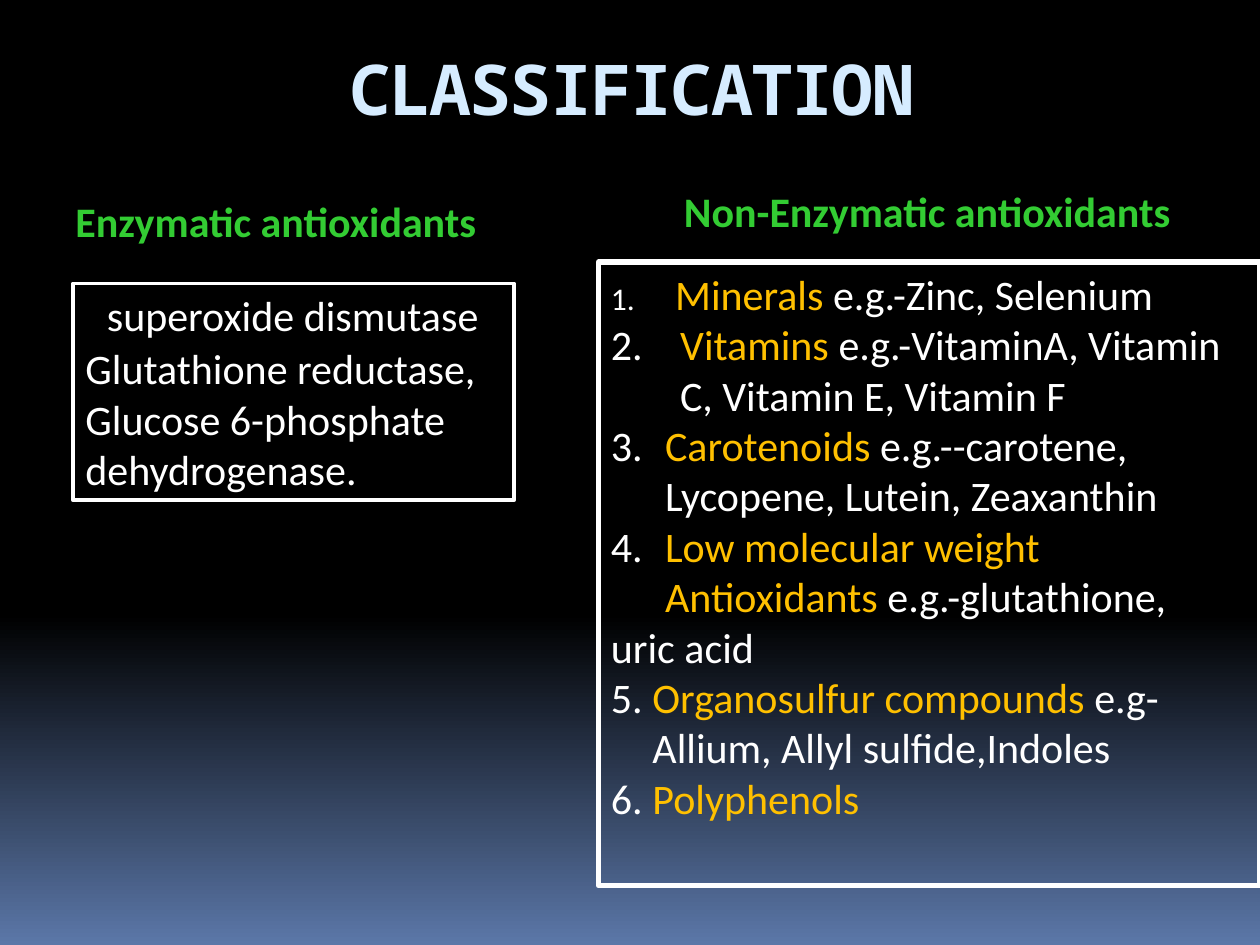
from lxml import etree
from pptx import Presentation
from pptx import util as u
from pptx.dml.color import RGBColor
from pptx.enum import shapes, text
from pptx.oxml.ns import qn

PX = u.Inches(1) // 100
COLORS = {
    "black": "000000", "blue": "5B77A8", "ice": "D6ECFF",
    "green": "33CC33", "white": "FFFFFF", "amber": "FFC000",
}
BODY = {"name": "Calibri", "size": u.Pt(24), "bold": False}
HEADING = {**BODY, "bold": True}
TITLE = {"name": "Noto Sans Mono", "size": u.Pt(40), "bold": True}
FRAME = {"word_wrap": True, "auto_size": text.MSO_AUTO_SIZE.NONE,
         "vertical_anchor": text.MSO_ANCHOR.TOP}

# number, indent, number size in %, highlighted words, plain words
ANTIOXIDANTS = [
    (1, 51, 75, "Minerals", " e.g.-Zinc, Selenium"),
    (2, 55, 100, "Vitamins",
     " e.g.-VitaminA, Vitamin C, Vitamin E, Vitamin F"),
    (3, 43, 100, "Carotenoids", " e.g.--carotene, Lycopene, Lutein, Zeaxanthin"),
    (4, 43, 100, "Low molecular weight Antioxidants", " e.g.-glutathione,"),
    (None, 0, 100, "", "uric acid"),
    (5, 33, 100, "Organosulfur compounds",
     " e.g-Allium, Allyl sulfide,Indoles"),
    (6, 33, 100, "Polyphenols", ""),
]


def rgb(name):
    """Return the named colour."""
    return RGBColor.from_string(COLORS[name])


def apply(target, values):
    """Set attributes of an object from a dict."""
    for name, value in values.items():
        setattr(target, name, value)


def place(shape, box):
    """Put a shape at a box given in px."""
    names = ("left", "top", "width", "height")
    apply(shape, {name: value * PX for name, value in zip(names, box)})


def add_run(paragraph, words, color, font):
    """Add formatted words to a paragraph."""
    run = paragraph.add_run()
    run.text = words
    apply(run.font, font)
    run.font.color.rgb = rgb(color)
    return run


def fill_lines(frame, lines, color, font):
    """Write one left-aligned paragraph per line."""
    for index, line in enumerate(lines):
        paragraph = frame.add_paragraph() if index else frame.paragraphs[0]
        paragraph.alignment = text.PP_ALIGN.LEFT
        add_run(paragraph, line, color, font)


def set_background(slide):
    """Fade the slide from black to blue at the bottom."""
    fill = slide.background.fill
    fill.gradient()
    fill.gradient_angle = 270
    for stop, position, color in zip(fill.gradient_stops, (0.65, 1), ("black", "blue")):
        stop.position = position
        stop.color.rgb = rgb(color)


def set_title(slide, words, box):
    """Move and format the title placeholder."""
    title = slide.shapes.title
    place(title, box)
    apply(title.text_frame, {**FRAME, "margin_top": 3 * PX, "margin_bottom": 0})
    fill_lines(title.text_frame, [words], "ice", TITLE)
    run = title.text_frame.paragraphs[0].runs[0]
    run.font._element.set("spc", "-100")


def add_label(slide, words, box, color, font):
    """Add a single-line text box."""
    label = slide.shapes.add_textbox(*(value * PX for value in box))
    apply(label.text_frame, {**FRAME, "word_wrap": False})
    fill_lines(label.text_frame, [words], color, font)


def add_panel(slide, box, line_width, anchor):
    """Add an outlined rectangle and return its text frame."""
    panel = slide.shapes.add_shape(
        shapes.MSO_SHAPE.RECTANGLE, *(value * PX for value in box))
    panel.shadow.inherit = False
    panel.fill.background()
    panel.line.color.rgb = rgb("white")
    panel.line.width = u.Pt(line_width)
    apply(panel.text_frame, {**FRAME, "vertical_anchor": anchor})
    return panel.text_frame


def number_paragraph(paragraph, number, indent, size):
    """Give a paragraph a hanging automatic number."""
    properties = paragraph._p.get_or_add_pPr()
    properties.set("marL", str(indent * PX))
    properties.set("indent", str(-indent * PX))
    color = etree.SubElement(properties, qn("a:buClr"))
    etree.SubElement(color, qn("a:srgbClr"), val=COLORS["white"])
    etree.SubElement(properties, qn("a:buSzPct"), val=str(size * 1000))
    etree.SubElement(properties, qn("a:buFont"), typeface=BODY["name"])
    etree.SubElement(properties, qn("a:buAutoNum"), type="arabicPeriod", startAt=str(number))


def fill_numbered_list(frame, items):
    """Write numbered items with a highlighted first part."""
    for index, (number, indent, size, highlight, plain) in enumerate(items):
        paragraph = frame.add_paragraph() if index else frame.paragraphs[0]
        paragraph.alignment = text.PP_ALIGN.LEFT
        if number:
            number_paragraph(paragraph, number, indent, size)
        for words, color in ((highlight, "amber"), (plain, "white")):
            if words:
                add_run(paragraph, words, color, BODY)


def main():
    """Build the classification slide."""
    presentation = Presentation()
    apply(presentation, {"slide_width": 1000 * PX, "slide_height": 750 * PX})
    slide = presentation.slides.add_slide(presentation.slide_layouts[5])
    set_background(slide)
    set_title(slide, "CLASSIFICATION", (267, 33, 550, 61))
    add_label(slide, "Enzymatic antioxidants", (50, 150, 364, 50), "green", HEADING)
    add_label(slide, "Non-Enzymatic antioxidants", (533, 142, 437, 50), "green", HEADING)
    numbered = add_panel(slide, (475, 208, 525, 495), 3, text.MSO_ANCHOR.TOP)
    fill_numbered_list(numbered, ANTIOXIDANTS)
    enzymes = add_panel(slide, (58, 225, 350, 172), 2.25, text.MSO_ANCHOR.BOTTOM)
    fill_lines(enzymes, ["Glutathione reductase,", "Glucose 6-phosphate dehydrogenase."],
               "white", BODY)
    add_label(slide, "superoxide dismutase", (75, 225, 323, 50), "white", BODY)
    presentation.save("out.pptx")


if __name__ == "__main__":
    main()
